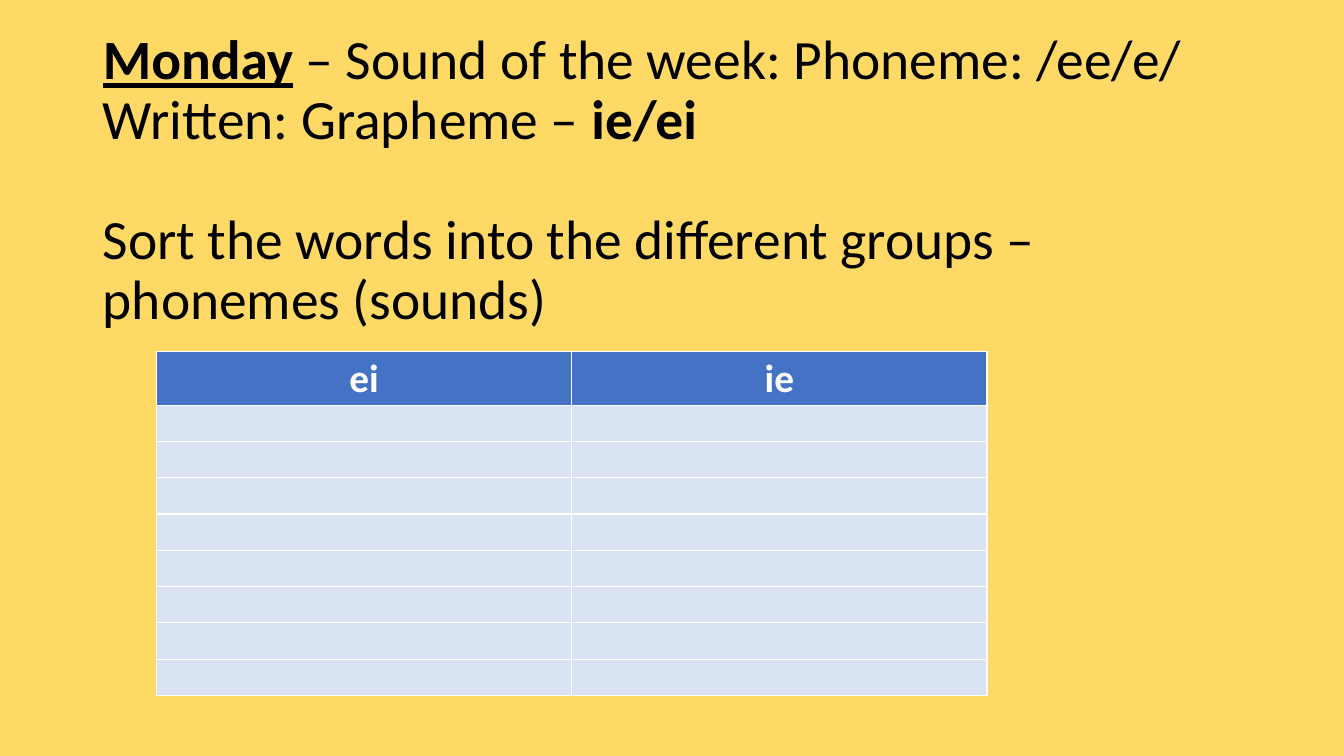
"""Build a phonics slide with a title and a table for sorting ei and ie words."""
import pptx
import pptx.dml.color
import pptx.enum.text
import pptx.util
import lxml.etree
from pptx.util import Inches


def rgb(hex_string):
    return pptx.dml.color.RGBColor.from_string(hex_string)


deck = pptx.Presentation()
deck.slide_width = Inches(13.33)
deck.slide_height = Inches(7.5)
slide = deck.slides.add_slide(deck.slide_layouts[5])
slide.background.fill.solid()
slide.background.fill.fore_color.rgb = rgb("FFD966")

title = slide.shapes.title
title.left, title.top = Inches(0.92), Inches(1.76)
title.width, title.height = Inches(11.5), Inches(0.08)
title.text_frame.word_wrap = True
title.text_frame.auto_size = pptx.enum.text.MSO_AUTO_SIZE.NONE
title.text_frame.vertical_anchor = pptx.enum.text.MSO_ANCHOR.MIDDLE

instruction = title.text_frame.paragraphs[0]
instruction.alignment = pptx.enum.text.PP_ALIGN.LEFT
instruction.line_spacing = 0.9
title_size = pptx.util.Pt(39.6)
wording = [
    ("Monday", True, True, 0),
    (" – Sound of the week: Phoneme: /ee/e/", False, False, 1),
    ("Written: Grapheme – ", False, False, 0),
    ("ie/ei", True, False, 2),
    ("Sort the words into the different groups – phonemes (sounds)", False, False, 0),
]
for words, bold, underline, breaks in wording:
    phrase = instruction.add_run()
    phrase.text = words
    phrase.font.name = "Calibri"
    phrase.font.size = title_size
    phrase.font.bold = bold
    phrase.font.underline = underline
    phrase.font.color.rgb = rgb("000000")
    for _ in range(breaks):
        instruction.add_line_break()
        line_break = instruction._p[-1]
        break_format = lxml.etree.SubElement(line_break, pptx.oxml.ns.qn("a:rPr"))
        break_format.set("sz", str(title_size.centipoints))

graphemes = ["ei", "ie"]
word_rows = 8
sorting_table = slide.shapes.add_table(
    word_rows + 1, len(graphemes), Inches(1.55), Inches(3.49), Inches(8.24), Inches(3.42)
).table
sorting_table.horz_banding = False
for row_number, row in enumerate(sorting_table.rows):
    row.height = Inches(0.36 if row_number else 0.53)
    for cell in row.cells:
        cell.margin_left = cell.margin_right = Inches(0.07)
        cell.margin_top = cell.margin_bottom = 0
        cell.fill.solid()
        cell.fill.fore_color.rgb = rgb("DAE3F3" if row_number else "4472C4")

for column, grapheme in enumerate(graphemes):
    heading = sorting_table.cell(0, column).text_frame.paragraphs[0]
    heading.text = grapheme
    heading.alignment = pptx.enum.text.PP_ALIGN.CENTER
    heading.line_spacing = 1.07
    heading_font = heading.runs[0].font
    heading_font.name = "Calibri"
    heading_font.size = pptx.util.Pt(28)
    heading_font.bold = True
    heading_font.color.rgb = rgb("FFFFFF")

deck.save("out.pptx")
